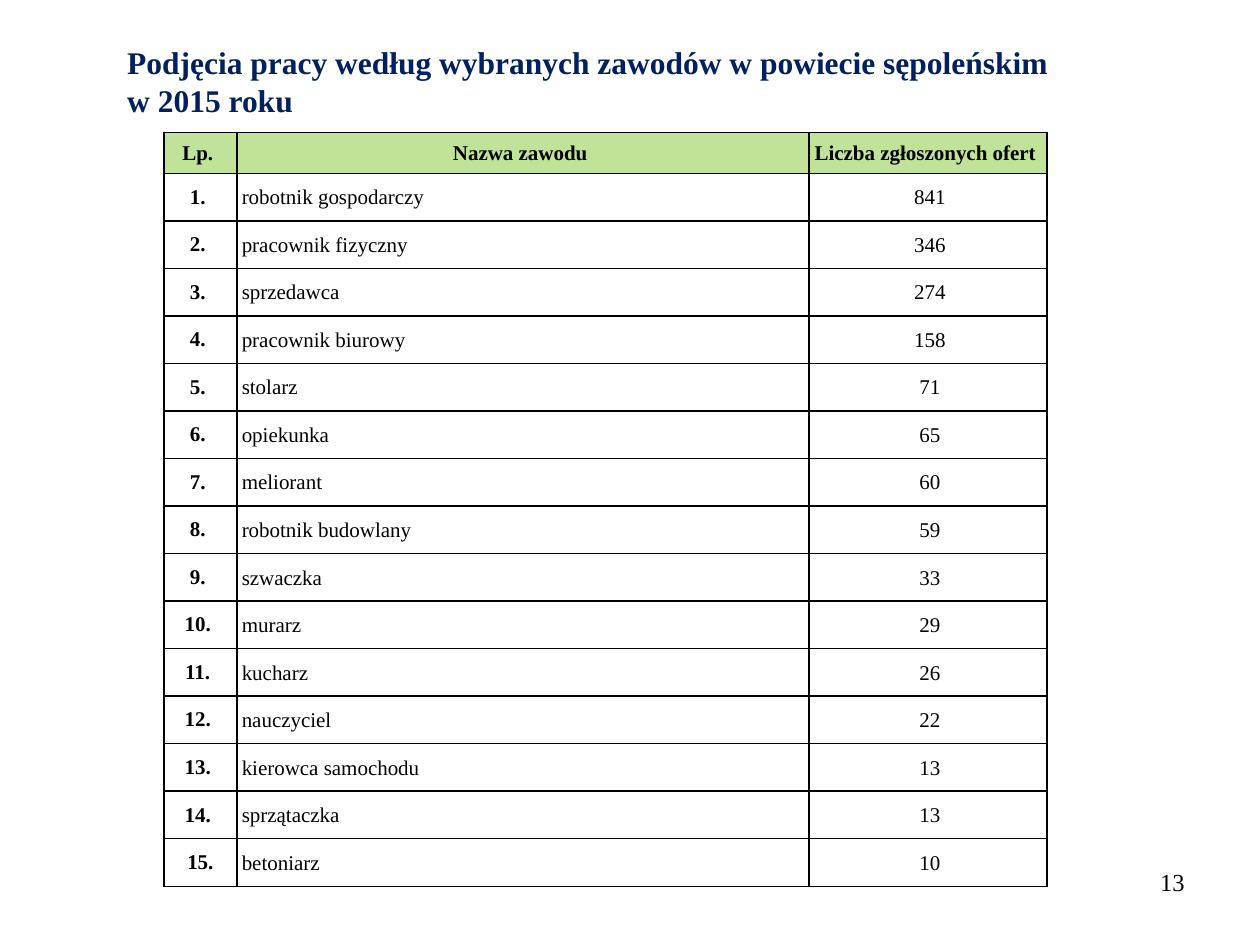
"""Build the slide listing job placements by occupation in a table."""
import lxml.etree
import pptx
import pptx.dml.color
import pptx.enum.text
import pptx.oxml.ns
import pptx.util

Pt = pptx.util.Pt
ALIGN = pptx.enum.text.PP_ALIGN
MIDDLE = pptx.enum.text.MSO_ANCHOR.MIDDLE
qn = pptx.oxml.ns.qn

TITLE_LINES = ["Podjęcia pracy według wybranych zawodów w powiecie sępoleńskim ", "w 2015 roku"]
HEADERS = ["Lp. ", "Nazwa zawodu ", "Liczba zgłoszonych ofert "]
OCCUPATIONS = [
    ("1. ", "robotnik gospodarczy", "841"),
    ("2. ", "pracownik fizyczny", "346"),
    ("3. ", "sprzedawca", "274"),
    ("4. ", "pracownik biurowy", "158"),
    ("5. ", "stolarz", "71"),
    ("6. ", "opiekunka", "65"),
    ("7. ", "meliorant", "60"),
    ("8. ", "robotnik budowlany", "59"),
    ("9. ", "szwaczka", "33"),
    ("10. ", "murarz", "29"),
    ("11. ", "kucharz", "26"),
    ("12. ", "nauczyciel", "22"),
    ("13. ", "kierowca samochodu", "13"),
    ("14. ", "sprzątaczka", "13"),
    ("15.", "betoniarz", "10"),
]
PAGE_NUMBER = "13"

FONT = "Times New Roman"
NAVY = pptx.dml.color.RGBColor(0x00, 0x20, 0x60)
BLACK = pptx.dml.color.RGBColor(0x00, 0x00, 0x00)
GREEN = pptx.dml.color.RGBColor(0xC0, 0xE3, 0x99)

COLUMN_WIDTHS = [41.8, 326.9, 136.1]
HEADER_HEIGHT, ROW_HEIGHT = 23.5, 27.16
HEADER_MARGINS = (0.7, 0.7, 0.7, 0)
NUMBER_MARGINS = (2.8, 2.8, 2.8, 2.8)
BODY_MARGINS = (2.8, 0.7, 0.7, 0)


def add_run(paragraph, text, size, color, bold=False):
    run = paragraph.add_run()
    run.text = text
    run.font.name = FONT
    run.font.size = Pt(size)
    run.font.bold = bold
    run.font.color.rgb = color


def add_borders(cell):
    properties = cell._tc.get_or_add_tcPr()
    for index, side in enumerate(["a:lnL", "a:lnR", "a:lnT", "a:lnB"]):
        line = lxml.etree.Element(qn(side), w=str(Pt(1)))
        fill = lxml.etree.SubElement(line, qn("a:solidFill"))
        lxml.etree.SubElement(fill, qn("a:srgbClr"), val=str(BLACK))
        properties.insert(index, line)


def format_cell(cell, text, margins, alignment, bold, color=None):
    cell.margin_left, cell.margin_right, cell.margin_top, cell.margin_bottom = map(Pt, margins)
    cell.vertical_anchor = MIDDLE
    if color is None:
        cell.fill.background()
    else:
        cell.fill.solid()
        cell.fill.fore_color.rgb = color
    add_borders(cell)
    paragraph = cell.text_frame.paragraphs[0]
    paragraph.alignment = alignment
    add_run(paragraph, text, 12, BLACK, bold)


def add_title(slide):
    title = slide.shapes.title
    title.left, title.top, title.width, title.height = map(Pt, (65.5, 20.9, 623.5, 50.4))
    title.text_frame.word_wrap = True
    title.text_frame.vertical_anchor = MIDDLE
    paragraph = title.text_frame.paragraphs[0]
    paragraph.alignment = ALIGN.LEFT
    for index, line in enumerate(TITLE_LINES):
        if index:
            paragraph.add_line_break()
        add_run(paragraph, line, 18, NAVY, True)


def add_occupation_table(slide):
    heights = [HEADER_HEIGHT] + [ROW_HEIGHT] * len(OCCUPATIONS)
    frame = slide.shapes.add_table(
        len(heights), len(COLUMN_WIDTHS), Pt(93.6), Pt(75.6), Pt(sum(COLUMN_WIDTHS)), Pt(sum(heights))
    )
    table = frame.table
    table.horz_banding = False
    for column, width in zip(table.columns, COLUMN_WIDTHS):
        column.width = Pt(width)
    for row, height in zip(table.rows, heights):
        row.height = Pt(height)
    for column, text in enumerate(HEADERS):
        format_cell(table.cell(0, column), text, HEADER_MARGINS, ALIGN.CENTER, True, GREEN)
    for row, (number, occupation, count) in enumerate(OCCUPATIONS, start=1):
        format_cell(table.cell(row, 0), number, NUMBER_MARGINS, ALIGN.CENTER, True)
        format_cell(table.cell(row, 1), occupation, BODY_MARGINS, ALIGN.LEFT, False)
        format_cell(table.cell(row, 2), count, BODY_MARGINS, ALIGN.CENTER, False)


def add_page_number(slide):
    box = slide.shapes.add_textbox(Pt(516.2), Pt(491.8), Pt(167.8), Pt(37.4))
    box.text_frame.word_wrap = True
    paragraph = box.text_frame.paragraphs[0]
    paragraph.alignment = ALIGN.RIGHT
    add_run(paragraph, PAGE_NUMBER, 14, BLACK)


def main():
    presentation = pptx.Presentation()
    presentation.slide_width, presentation.slide_height = Pt(720), Pt(540)
    slide = presentation.slides.add_slide(presentation.slide_layouts[5])
    add_title(slide)
    add_occupation_table(slide)
    add_page_number(slide)
    presentation.save("out.pptx")


if __name__ == "__main__":
    main()
